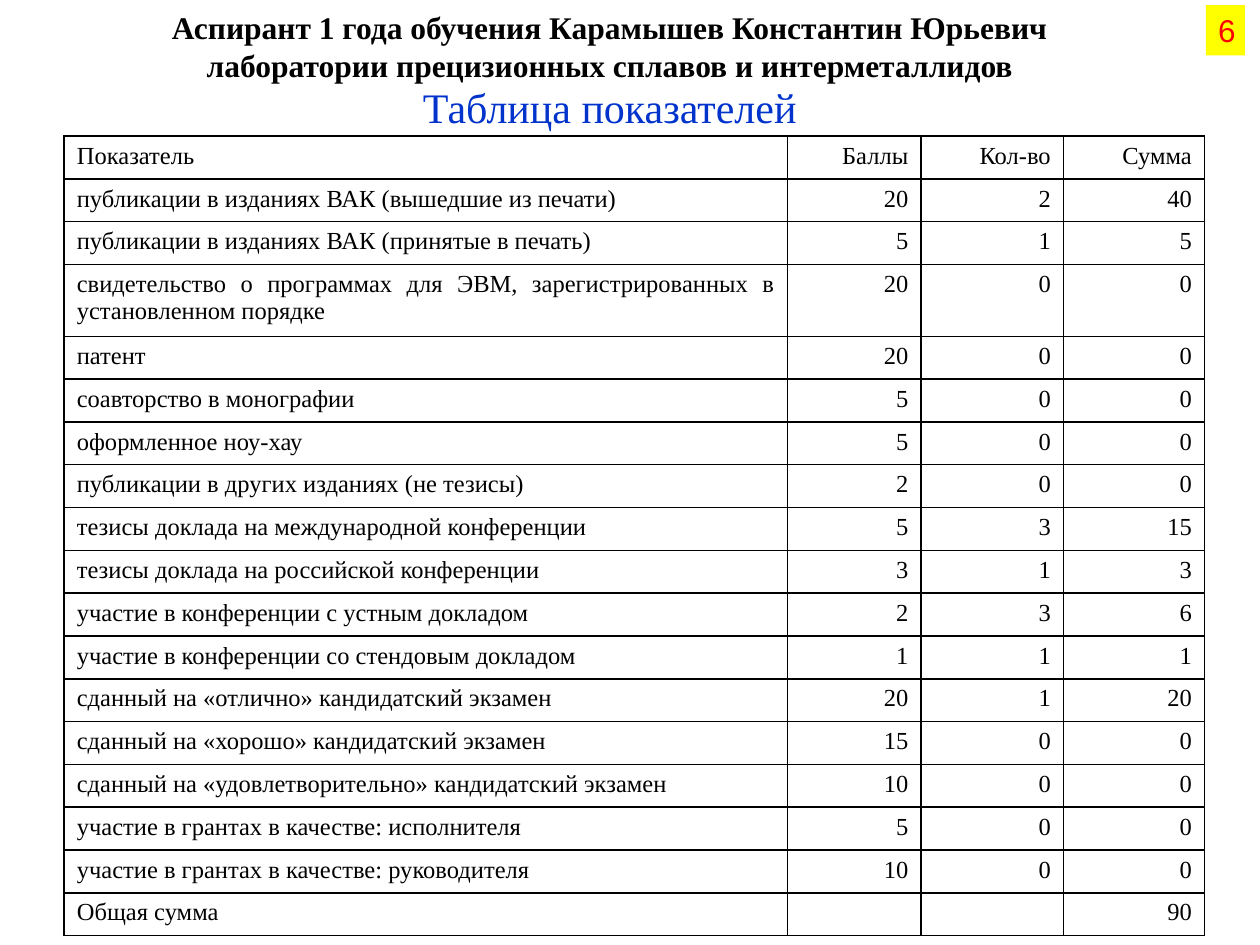
"""Build a slide with a postgraduate's table of indicators."""
import pptx
import pptx.dml.color
import pptx.enum.shapes
import pptx.enum.text
import pptx.oxml.ns
import pptx.util
from lxml import etree

Inches = pptx.util.Inches
Pt = pptx.util.Pt
ALIGN = pptx.enum.text.PP_ALIGN
ANCHOR = pptx.enum.text.MSO_ANCHOR
qn = pptx.oxml.ns.qn

COLORS = {"black": "000000", "blue": "0033CC", "red": "FF0000", "yellow": "FFFF00"}
SERIF = "Times New Roman"
HEAD = ("Показатель", "Баллы", "Кол-во", "Сумма")
ITEMS = [
    ("публикации в изданиях ВАК (вышедшие из печати)", 20, 2),
    ("публикации в изданиях ВАК (принятые в печать)", 5, 1),
    ("свидетельство о программах для ЭВМ, зарегистрированных в установленном порядке", 20, 0),
    ("патент", 20, 0),
    ("соавторство в монографии", 5, 0),
    ("оформленное ноу-хау", 5, 0),
    ("публикации в других изданиях (не тезисы)", 2, 0),
    ("тезисы доклада на международной конференции", 5, 3),
    ("тезисы доклада на российской конференции", 3, 1),
    ("участие в конференции с устным докладом", 2, 3),
    ("участие в конференции со стендовым докладом", 1, 1),
    ("сданный на «отлично» кандидатский экзамен", 20, 1),
    ("сданный на «хорошо» кандидатский экзамен", 15, 0),
    ("сданный на «удовлетворительно» кандидатский экзамен", 10, 0),
    ("участие в грантах в качестве: исполнителя", 5, 0),
    ("участие в грантах в качестве: руководителя", 10, 0),
]
WIDTHS = (5.74, 1.06, 1.13, 1.12)
ROW, TALL, TALL_ROW = 0.34, 0.57, 3


def color(name):
    return pptx.dml.color.RGBColor.from_string(COLORS[name])


def write(frame, text, size, tint="black", face=SERIF, align=ALIGN.CENTER, bold=False):
    para = frame.paragraphs[0]
    para.text = text
    para.alignment = align
    for run in para.runs:
        run.font.size = Pt(size)
        run.font.name = face
        run.font.bold = bold
        run.font.color.rgb = color(tint)
    if not text:
        etree.SubElement(para._p, qn("a:endParaRPr"), sz=str(size * 100))
    return para


def add_text(slide, box, text, size, anchor=ANCHOR.TOP, **style):
    frame = slide.shapes.add_textbox(*map(Inches, box)).text_frame
    frame.word_wrap = True
    frame.vertical_anchor = anchor
    return write(frame, text, size, **style)


def add_badge(slide, box, text):
    shape = slide.shapes.add_shape(pptx.enum.shapes.MSO_SHAPE.RECTANGLE, *map(Inches, box))
    shape.shadow.inherit = False
    shape.fill.solid()
    shape.fill.fore_color.rgb = color("yellow")
    shape.line.fill.background()
    frame = shape.text_frame
    frame.word_wrap = False
    frame.vertical_anchor = ANCHOR.TOP
    frame.auto_size = pptx.enum.text.MSO_AUTO_SIZE.SHAPE_TO_FIT_TEXT
    write(frame, text, 18, "red", "Arial", ALIGN.RIGHT)


def set_edges(cell):
    props = cell._tc.get_or_add_tcPr()
    for side in ("a:lnL", "a:lnR", "a:lnT", "a:lnB"):
        line = etree.SubElement(props, qn(side), w=str(Pt(1)))
        fill = etree.SubElement(line, qn("a:solidFill"))
        etree.SubElement(fill, qn("a:srgbClr"), val=COLORS["black"])


def add_grid(slide, left, top, rows):
    heights = [TALL if i == TALL_ROW else ROW for i in range(len(rows))]
    box = (left, top, sum(WIDTHS), sum(heights))
    table = slide.shapes.add_table(len(rows), len(WIDTHS), *map(Inches, box)).table
    table.first_row = False
    table.horz_banding = False
    for col, width in zip(table.columns, WIDTHS):
        col.width = Inches(width)
    for row, height, values in zip(table.rows, heights, rows):
        row.height = Inches(height)
        for i, (cell, value) in enumerate(zip(row.cells, values)):
            set_edges(cell)
            cell.fill.background()
            align = ALIGN.RIGHT if i else ALIGN.JUSTIFY
            write(cell.text_frame, str(value), 14, align=align)


def main():
    deck = pptx.Presentation()
    deck.slide_width, deck.slide_height = Inches(10), Inches(7.5)
    slide = deck.slides.add_slide(deck.slide_layouts[6])
    title = add_text(slide, (1.34, 0.6, 7, 0.47), "Таблица показателей", 24, tint="blue")
    title.space_before = Pt(4.8)
    lines = [(name, points, count, points * count) for name, points, count in ITEMS]
    total = ("Общая сумма", "", "", sum(line[-1] for line in lines))
    add_grid(slide, 0.51, 1.08, [HEAD, *lines, total])
    add_text(
        slide, (0.59, 0.01, 8.5, 0.71),
        "Аспирант 1 года обучения Карамышев Константин Юрьевич\v"
        "лаборатории прецизионных сплавов и интерметаллидов",
        18, ANCHOR.MIDDLE, bold=True,
    )
    add_badge(slide, (9.57, 0.04, 0.31, 0.4), "6")
    deck.save("out.pptx")


if __name__ == "__main__":
    main()
